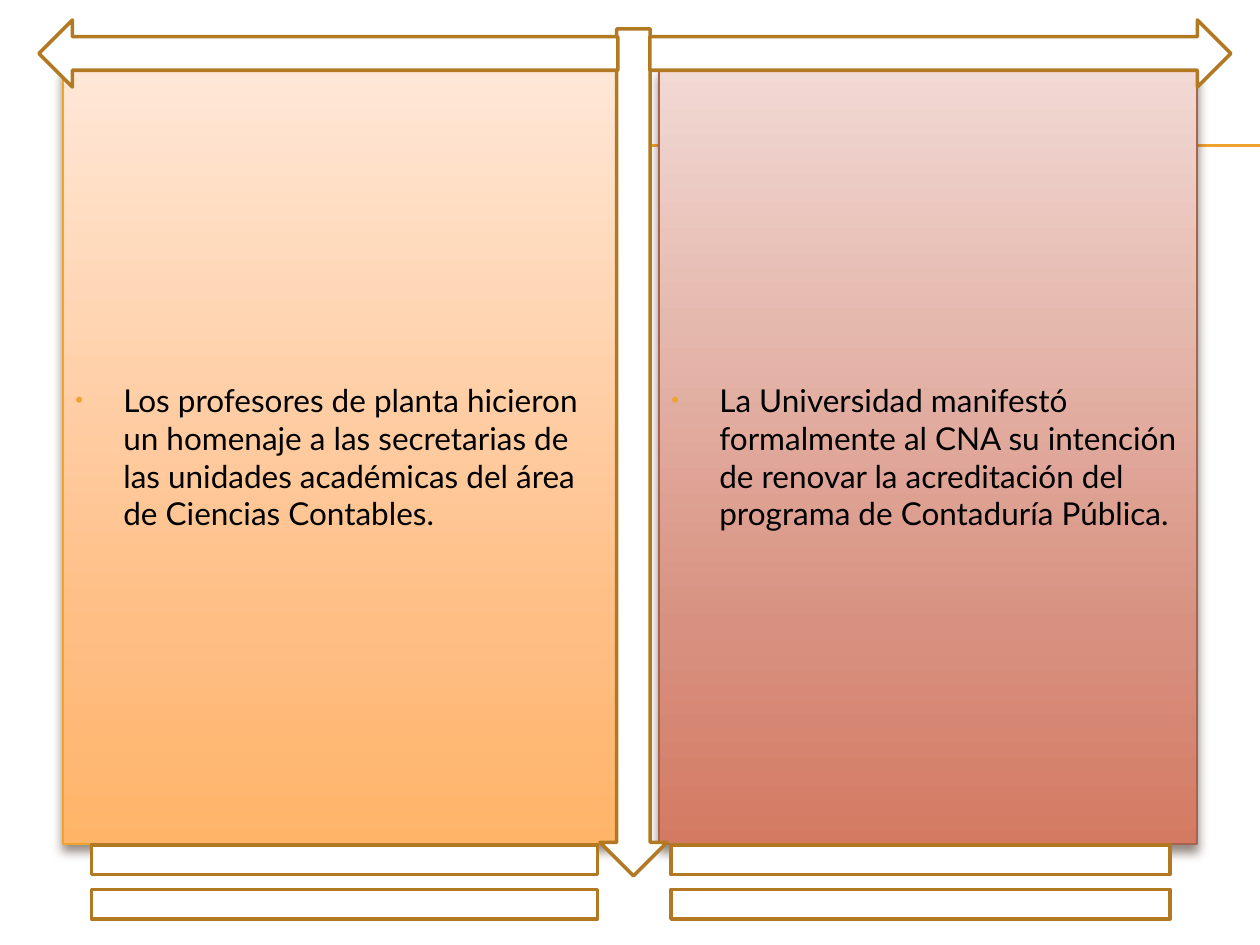
"""Build a slide with two news panels framed by block arrows."""
from lxml import etree
from pptx import Presentation
from pptx import util as u
from pptx.dml.color import RGBColor
from pptx.enum import shapes, text
from pptx.oxml import ns

PX = u.Inches(1) // 126
GOLD = RGBColor(0xF0, 0xA2, 0x2E)
RUST = RGBColor(0xA5, 0x64, 0x4E)
BROWN = RGBColor(0xB2, 0x78, 0x22)
WHITE = RGBColor(0xFF, 0xFF, 0xFF)
BLACK = RGBColor(0, 0, 0)
SHADE = RGBColor(0x4E, 0x3B, 0x30)
PEACH = ("FFE7D7", "FFBE84", "FFB468")
ROSE = ("F1D9D4", "D89180", "D47A62")
KIND = shapes.MSO_SHAPE


def add(root, tag, **attrs):
    node = etree.SubElement(root, ns.qn(tag))
    for key, val in attrs.items():
        node.set(key, str(val))
    return node


def draw(kind, box, edge, width):
    shape = slide.shapes.add_shape(kind, *[n * PX for n in box])
    shape.shadow.inherit = False
    shape.line.color.rgb = edge
    shape.line.width = u.Pt(width)
    return shape


prs = Presentation()
prs.slide_width, prs.slide_height = 1260 * PX, 945 * PX
slide = prs.slides.add_slide(prs.slide_layouts[6])

for y in (145, 146):
    rule = slide.shapes.add_connector(
        shapes.MSO_CONNECTOR.STRAIGHT, 71 * PX, y * PX, 1260 * PX, y * PX)
    rule.line.color.rgb = GOLD
    rule.line.width = u.Pt(0.75)
    add(rule._element.spPr, "a:effectLst")

panels = (
    (63, 557, GOLD, PEACH,
     "Los profesores de planta hicieron un homenaje a las secretarias de "
     "las unidades académicas del área de Ciencias Contables."),
    (659, 538, RUST, ROSE,
     "La Universidad manifestó formalmente al CNA su intención de renovar "
     "la acreditación del programa de Contaduría Pública."),
)
for left, width, edge, tones, words in panels:
    panel = draw(KIND.RECTANGLE, (left, 69, width, 775), edge, 0.79)
    panel.fill.gradient()
    panel.fill.gradient_angle = 270
    props = panel._element.spPr
    stops = props.find(".//" + ns.qn("a:gsLst"))
    for stop in list(stops):
        stops.remove(stop)
    for pos, tone in zip((0, 72000, 100000), tones):
        add(add(stops, "a:gs", pos=pos), "a:srgbClr", val=tone)
    cast = add(props.find(ns.qn("a:effectLst")), "a:outerShdw",
               blurRad=u.Pt(6), dist=u.Pt(4), dir=5400000, rotWithShape=0)
    add(add(cast, "a:srgbClr", val=SHADE), "a:alpha", val=60000)

    frame = panel.text_frame
    frame.word_wrap = True
    frame.vertical_anchor = text.MSO_ANCHOR.MIDDLE
    para = frame.paragraphs[0]
    para.text = words
    para.alignment = text.PP_ALIGN.LEFT
    form = para._p.get_or_add_pPr()
    form.set("marL", str(48 * PX))
    form.set("indent", str(-48 * PX))
    add(add(form, "a:buClr"), "a:srgbClr", val=GOLD)
    add(form, "a:buSzPct", val=70000)
    add(form, "a:buFont", typeface="Arial")
    add(form, "a:buChar", char="•")
    para.font.name = "Lato"
    para.font.size = u.Pt(18)
    para.font.color.rgb = BLACK

marks = (
    (KIND.DOWN_ARROW, (600, 29, 67, 847)),
    (KIND.RIGHT_ARROW, (650, 20, 581, 67)),
    (KIND.LEFT_ARROW, (39, 20, 579, 67)),
    (KIND.MATH_EQUAL, (0, 819, 689, 126)),
    (KIND.MATH_EQUAL, (581, 819, 679, 126)),
)
for kind, box in marks:
    mark = draw(kind, box, BROWN, 2)
    mark.fill.solid()
    mark.fill.fore_color.rgb = WHITE

prs.save("out.pptx")
